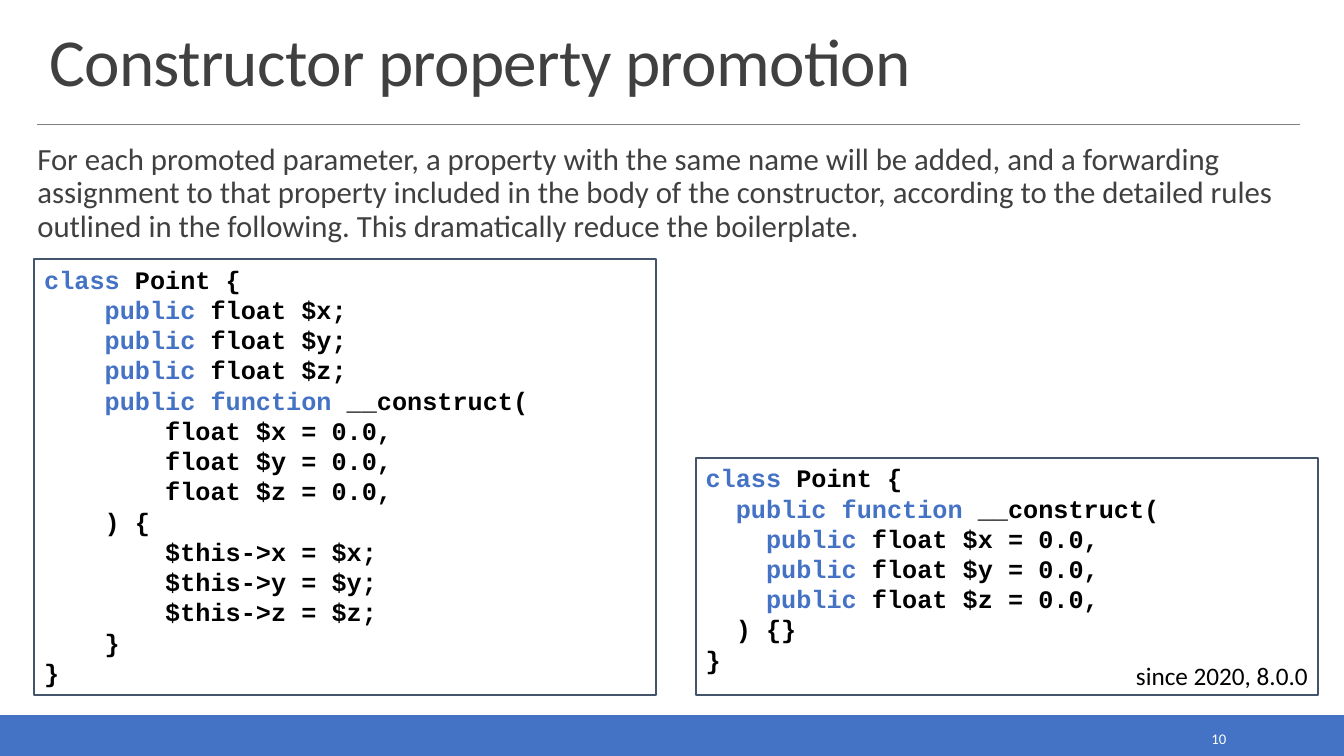
from dataclasses import dataclass, field
from typing import Any

import pptx
import pptx.dml.color
import pptx.enum.shapes
import pptx.enum.text
import pptx.util

Inches, Pt = pptx.util.Inches, pptx.util.Pt
RGB = pptx.dml.color.RGBColor.from_string
ALIGN = pptx.enum.text.PP_ALIGN
ANCHOR = pptx.enum.text.MSO_ANCHOR


@dataclass(frozen=True)
class Theme:
    sans: str = "Calibri"
    mono: str = "Courier New"
    accent: str = "4472C4"
    frame: str = "44546A"
    rule: str = "808080"
    heading: str = "404040"
    black: str = "000000"
    white: str = "FFFFFF"
    title_size: float = 48
    body_size: float = 22
    code_size: float = 18
    number_size: float = 10.5


@dataclass(frozen=True)
class Label:
    text: str
    box: tuple[float, float, float, float]
    size: float
    color: str
    para: dict[str, Any] = field(default_factory=dict)
    frame: dict[str, Any] = field(default_factory=dict)
    spacing: int = 0  # hundredths of a point


@dataclass(frozen=True)
class CodeBox:
    left: float
    top: float
    code: str


T = Theme()
CODE_WIDTH, CODE_BOTTOM = 6.17, 6.9
KEYWORDS = ("public function", "public", "class")

LABELS = [
    Label("Constructor property promotion", (0.39, 0.2, 12.52, 0.84),
          T.title_size, T.heading, {"line_spacing": 0.85},
          {"vertical_anchor": ANCHOR.BOTTOM}, -50),
    Label("For each promoted parameter, a property with the same name will be "
          "added, and a forwarding assignment to that property included in the "
          "body of the constructor, according to the detailed rules outlined in "
          "the following. This dramatically reduce the boilerplate.",
          (0.37, 1.39, 12.52, 0.63), T.body_size, T.heading,
          {"line_spacing": 0.9, "space_after": Pt(2)},
          {"margin_left": 0, "margin_right": 0,
           "margin_top": Inches(0.04), "margin_bottom": Inches(0.04)}),
    Label("10", (10.83, 7.19, 1.43, 0.28), T.number_size, T.white,
          {"alignment": ALIGN.RIGHT}, {"vertical_anchor": ANCHOR.MIDDLE}),
    Label("since 2020, 8.0.0", (10.29, 6.5, 2.78, 0.4), T.code_size, T.black,
          {"alignment": ALIGN.RIGHT},
          {"auto_size": pptx.enum.text.MSO_AUTO_SIZE.SHAPE_TO_FIT_TEXT}),
]

CODE_BOXES = [
    CodeBox(6.9, 4.54, """class Point {
  public function __construct(
    public float $x = 0.0,
    public float $y = 0.0,
    public float $z = 0.0,
  ) {}
}"""),
    CodeBox(0.34, 2.57, """class Point {
    public float $x;
    public float $y;
    public float $z;
    public function __construct(
        float $x = 0.0,
        float $y = 0.0,
        float $z = 0.0,
    ) {
        $this->x = $x;
        $this->y = $y;
        $this->z = $z;
    }
}"""),
]


def apply(obj: Any, values: dict[str, Any]) -> None:
    for name, value in values.items():
        setattr(obj, name, value)


def add_run(p: Any, text: str, color: str, font: dict[str, Any]) -> Any:
    r = p.add_run()
    r.text = text
    apply(r.font, font)
    r.font.color.rgb = RGB(color)
    return r


def add_rect(s: Any, box: tuple[float, float, float, float], line: str,
             width: float, fill: str | None = None) -> Any:
    sp = s.shapes.add_shape(pptx.enum.shapes.MSO_SHAPE.RECTANGLE, *map(Inches, box))
    sp.shadow.inherit = False
    if fill:
        sp.fill.solid()
        sp.fill.fore_color.rgb = RGB(fill)
    else:
        sp.fill.background()
    sp.line.color.rgb = RGB(line)
    sp.line.width = Pt(width)
    return sp


def add_rule(s: Any, left: float, right: float, y: float) -> None:
    cx = s.shapes.add_connector(pptx.enum.shapes.MSO_CONNECTOR.STRAIGHT,
                                Inches(left), Inches(y), Inches(right), Inches(y))
    cx.line.color.rgb = RGB(T.rule)
    cx.line.width = Pt(0.5)
    sp_pr = cx._element.spPr
    sp_pr.append(sp_pr.makeelement(pptx.oxml.ns.qn("a:effectLst"), {}))


def add_label(s: Any, label: Label) -> None:
    tf = s.shapes.add_textbox(*map(Inches, label.box)).text_frame
    apply(tf, {"word_wrap": True, **label.frame})
    p = tf.paragraphs[0]
    apply(p, label.para)
    r = add_run(p, label.text, label.color, {"name": T.sans, "size": Pt(label.size)})
    if label.spacing:
        r.font._element.set("spc", str(label.spacing))


def add_code(s: Any, item: CodeBox) -> None:
    box = (item.left, item.top, CODE_WIDTH, CODE_BOTTOM - item.top)
    tf = add_rect(s, box, T.frame, 1.5).text_frame
    apply(tf, {"word_wrap": True, "vertical_anchor": ANCHOR.TOP})
    font = {"name": T.mono, "size": Pt(T.code_size), "bold": True}
    for i, line in enumerate(item.code.splitlines()):
        p = tf.add_paragraph() if i else tf.paragraphs[0]
        p.alignment = ALIGN.LEFT
        # Split each line into indent, leading keyword and the rest
        body = line.lstrip()
        indent = line[:len(line) - len(body)]
        keyword = next((k for k in KEYWORDS if body.startswith(k)), "")
        parts = ((indent, T.black), (keyword, T.accent),
                 (body[len(keyword):], T.black))
        for text, color in parts:
            if text:
                add_run(p, text, color, font)


def main() -> None:
    prs = pptx.Presentation()
    prs.slide_width, prs.slide_height = Inches(13.33), Inches(7.5)
    s = prs.slides.add_slide(prs.slide_layouts[6])

    # Footer bar and title rule
    add_rect(s, (0, 7.1, 13.33, 0.4), T.accent, 1.25, T.accent)
    add_rule(s, 0.37, 12.89, 1.23)

    # Code before and after promotion
    for item in CODE_BOXES:
        add_code(s, item)

    # Title, explanation, slide number and version note
    for label in LABELS:
        add_label(s, label)

    prs.save("out.pptx")


if __name__ == "__main__":
    main()
